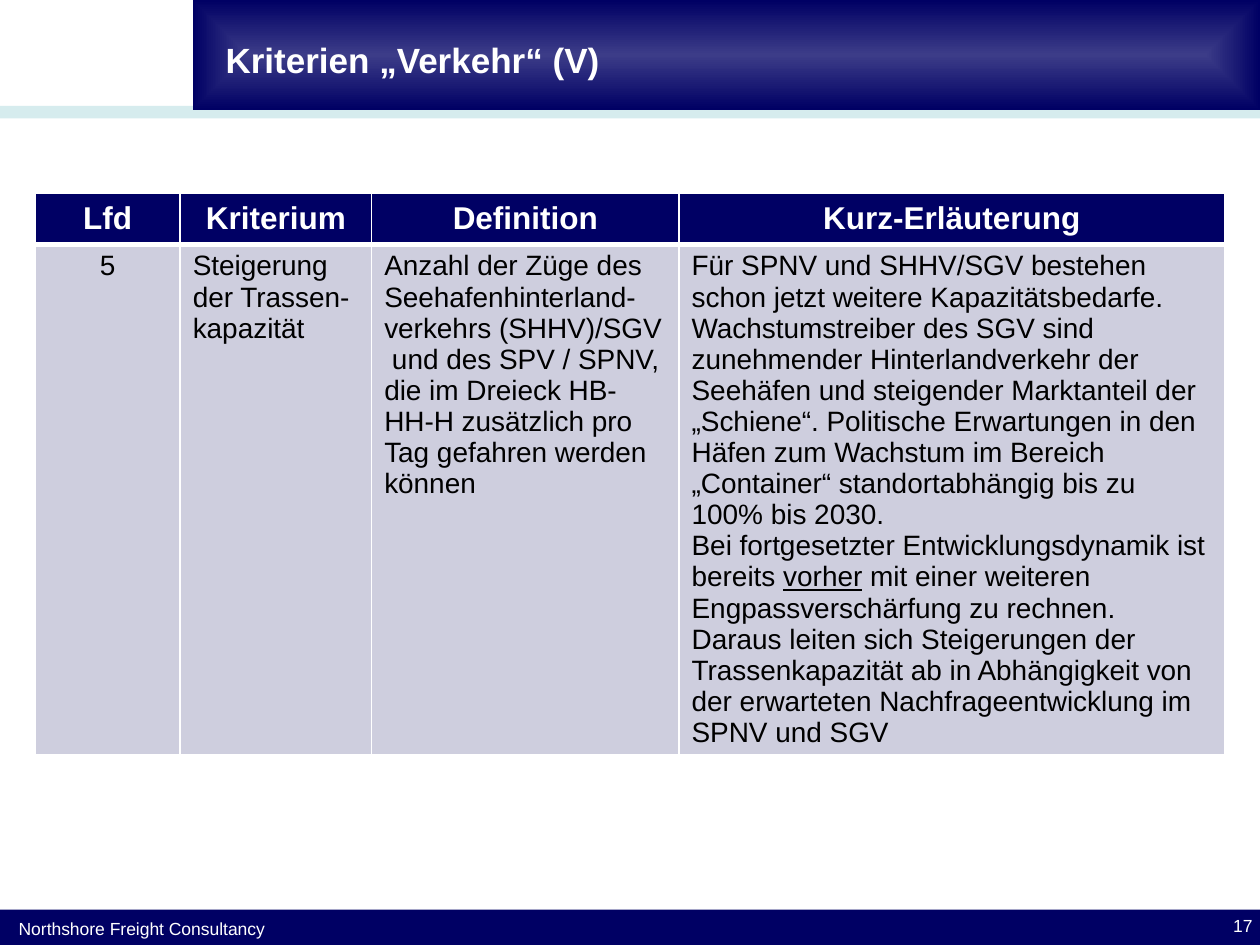
from dataclasses import dataclass

from lxml import etree
from pptx import Presentation
from pptx.dml.color import RGBColor
from pptx.enum.shapes import MSO_SHAPE
from pptx.enum.text import MSO_ANCHOR, PP_ALIGN
from pptx.oxml import parse_xml
from pptx.oxml.ns import nsdecls, qn
from pptx.util import Inches, Pt

RECTANGLE = MSO_SHAPE.RECTANGLE
TOP, MIDDLE = MSO_ANCHOR.TOP, MSO_ANCHOR.MIDDLE
LEFT, CENTER, RIGHT = PP_ALIGN.LEFT, PP_ALIGN.CENTER, PP_ALIGN.RIGHT


@dataclass(frozen=True)
class Theme:
    font: str = "Arial"
    navy: str = "000064"
    glow: str = "3C3C88"
    ice: str = "BBE0E3"
    cell: str = "CECEDE"
    white: str = "FFFFFF"
    black: str = "000000"
    title_size: int = 20
    header_size: int = 18
    body_size: int = 16
    footer_size: int = 10


THEME = Theme()
COLUMN_WIDTHS = (1.15, 1.52, 2.44, 4.33)
ROW_HEIGHTS = (0.41, 4.04)
HEADERS = ("Lfd", "Kriterium", "Definition", "Kurz-Erläuterung")

# Each cell is a list of paragraphs; underscores enclose underlined words
CRITERION = (
    ["5"],
    ["Steigerung der Trassen-kapazität"],
    ["Anzahl der Züge des Seehafenhinterland-verkehrs (SHHV)/SGV  und des "
     "SPV / SPNV, die im Dreieck HB-HH-H zusätzlich pro Tag gefahren werden können"],
    ["Für SPNV und SHHV/SGV bestehen schon jetzt weitere Kapazitätsbedarfe.",
     "Wachstumstreiber des SGV sind zunehmender Hinterlandverkehr der Seehäfen "
     "und steigender Marktanteil der „Schiene“. Politische Erwartungen in den "
     "Häfen zum Wachstum im Bereich „Container“ standortabhängig bis zu 100% bis 2030.",
     "Bei fortgesetzter Entwicklungsdynamik ist bereits _vorher_ mit einer "
     "weiteren Engpassverschärfung zu rechnen.",
     "Daraus leiten sich Steigerungen der Trassenkapazität ab in Abhängigkeit "
     "von der erwarteten Nachfrageentwicklung im SPNV und SGV"],
)


def write_text(text_frame, paragraphs, size, color, bold=False, align=LEFT):
    text_frame.word_wrap = True
    for index, text in enumerate(paragraphs):
        paragraph = text_frame.paragraphs[0] if index == 0 else text_frame.add_paragraph()
        paragraph.alignment = align
        for part, words in enumerate(text.split("_")):
            run = paragraph.add_run()
            run.text = words
            run.font.name = THEME.font
            run.font.size = Pt(size)
            run.font.bold = bold
            run.font.color.rgb = RGBColor.from_string(color)
            if part % 2:
                run.font.underline = True


def add_band(slide, left, top, width, height, color):
    band = slide.shapes.add_shape(
        RECTANGLE, Inches(left), Inches(top), Inches(width), Inches(height))
    band.shadow.inherit = False
    band.line.fill.background()
    band.fill.solid()
    band.fill.fore_color.rgb = RGBColor.from_string(color)
    return band


def set_opacity(shape, percent):
    color = shape.fill._xPr.find(qn("a:solidFill"))[0]
    etree.SubElement(color, qn("a:alpha")).set("val", str(percent * 1000))


def set_center_gradient(shape, inner, outer):
    properties = shape.fill._xPr
    gradient = parse_xml(
        f'<a:gradFill {nsdecls("a")} rotWithShape="1"><a:gsLst>'
        f'<a:gs pos="0"><a:srgbClr val="{inner}"/></a:gs>'
        f'<a:gs pos="100000"><a:srgbClr val="{outer}"/></a:gs></a:gsLst>'
        '<a:path path="shape"><a:fillToRect l="50000" t="50000" r="50000" b="50000"/>'
        '</a:path></a:gradFill>')
    properties.replace(properties.find(qn("a:solidFill")), gradient)


def add_label(slide, left, top, width, height, text, align=LEFT):
    box = slide.shapes.add_textbox(
        Inches(left), Inches(top), Inches(width), Inches(height))
    write_text(box.text_frame, [text], THEME.footer_size, THEME.white, align=align)


def set_borders(cell, top, bottom):
    properties = cell._tc.get_or_add_tcPr()
    widths = {"lnL": 1, "lnR": 1, "lnT": top, "lnB": bottom}
    for position, (tag, width) in enumerate(widths.items()):
        properties.insert(position, parse_xml(
            f'<a:{tag} {nsdecls("a")} w="{Pt(width)}"><a:solidFill>'
            f'<a:srgbClr val="{THEME.white}"/></a:solidFill></a:{tag}>'))


def fill_cell(cell, color, anchor, top, bottom):
    cell.fill.solid()
    cell.fill.fore_color.rgb = RGBColor.from_string(color)
    cell.vertical_anchor = anchor
    set_borders(cell, top, bottom)


def add_criteria_table(slide):
    table = slide.shapes.add_table(
        len(ROW_HEIGHTS), len(COLUMN_WIDTHS), Inches(0.28), Inches(1.53),
        Inches(sum(COLUMN_WIDTHS)), Inches(sum(ROW_HEIGHTS))).table
    for row, height in zip(table.rows, ROW_HEIGHTS):
        row.height = Inches(height)
    for index, width in enumerate(COLUMN_WIDTHS):
        table.columns[index].width = Inches(width)

        header = table.cell(0, index)
        fill_cell(header, THEME.navy, MIDDLE, top=1, bottom=3)
        write_text(header.text_frame, [HEADERS[index]], THEME.header_size,
                   THEME.white, bold=True, align=CENTER)

        body = table.cell(1, index)
        is_last = index == len(COLUMN_WIDTHS) - 1
        fill_cell(body, THEME.cell, MIDDLE if is_last else TOP, top=3, bottom=1)
        write_text(body.text_frame, CRITERION[index], THEME.body_size,
                   THEME.black, align=LEFT if index else CENTER)


def set_title(slide, text):
    title = slide.shapes.title
    title.left, title.top = Inches(1.69), Inches(0.2)
    title.width, title.height = Inches(8.31), Inches(0.54)
    title.text_frame.vertical_anchor = MIDDLE
    write_text(title.text_frame, [text], THEME.title_size, THEME.white, bold=True)
    # Bring the title in front of the bands
    slide.shapes._spTree.append(title._element)


def main():
    presentation = Presentation()
    presentation.slide_width, presentation.slide_height = Inches(10), Inches(7.5)
    slide = presentation.slides.add_slide(presentation.slide_layouts[5])

    # Header bands and title
    set_opacity(add_band(slide, 0, 0.84, 10, 0.1, THEME.ice), 60)
    title_band = add_band(slide, 1.53, 0, 8.47, 0.87, THEME.navy)
    set_center_gradient(title_band, THEME.glow, THEME.navy)
    set_title(slide, "Kriterien „Verkehr“ (V)")

    # Criteria
    add_criteria_table(slide)

    # Footer
    add_band(slide, 0, 7.22, 10, 0.28, THEME.navy)
    add_label(slide, 0.05, 7.24, 6.3, 0.27, "Northshore Freight Consultancy")
    add_label(slide, 7.71, 7.21, 2.33, 0.27, "17", RIGHT)

    presentation.save("out.pptx")


if __name__ == "__main__":
    main()
